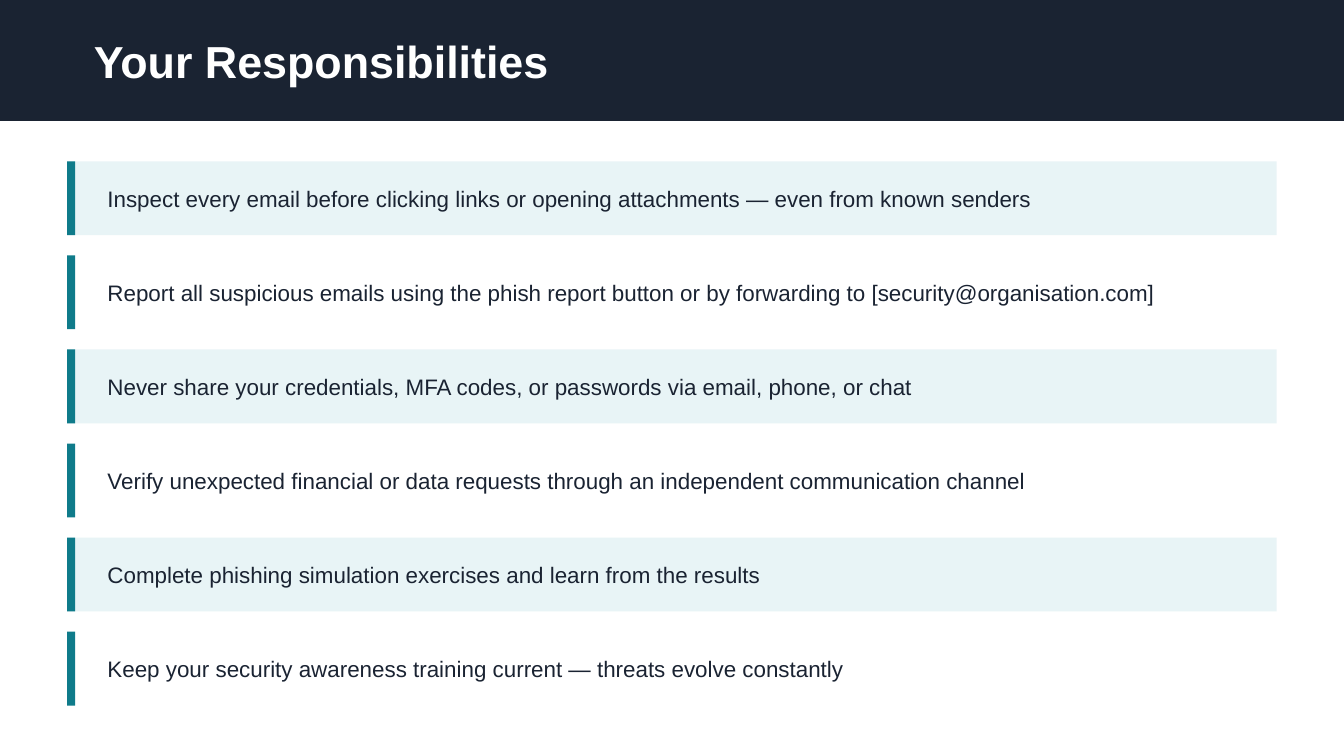
import pptx
import pptx.dml.color
import pptx.enum.shapes
import pptx.enum.text
import pptx.util

Pt = pptx.util.Pt

COLOURS = {
    "navy": "1A2332",
    "teal": "0F7B8A",
    "tint": "E8F4F6",
    "white": "FFFFFF",
}

RESPONSIBILITIES = [
    "Inspect every email before clicking links or opening attachments — even from known senders",
    "Report all suspicious emails using the phish report button or by forwarding to [security@organisation.com]",
    "Never share your credentials, MFA codes, or passwords via email, phone, or chat",
    "Verify unexpected financial or data requests through an independent communication channel",
    "Complete phishing simulation exercises and learn from the results",
    "Keep your security awareness training current — threats evolve constantly",
]

PAGE_WIDTH, PAGE_HEIGHT = 720, 405
ROW_LEFT, ROW_TOP = 36, 86.4
ROW_WIDTH, ROW_HEIGHT = 648, 39.6
ROW_STEP = 50.4


def colour(name):
    return pptx.dml.color.RGBColor.from_string(COLOURS[name])


def add_block(page, left, top, width, height, fill):
    block = page.shapes.add_shape(
        pptx.enum.shapes.MSO_SHAPE.RECTANGLE, Pt(left), Pt(top), Pt(width), Pt(height)
    )
    block.shadow.inherit = False
    block.fill.solid()
    block.fill.fore_color.rgb = colour(fill)
    block.line.fill.background()


def add_text(page, left, top, width, height, text, size, ink, bold=False):
    box = page.shapes.add_textbox(Pt(left), Pt(top), Pt(width), Pt(height))
    frame = box.text_frame
    frame.word_wrap = True
    frame.vertical_anchor = pptx.enum.text.MSO_ANCHOR.MIDDLE
    para = frame.paragraphs[0]
    para.text = text
    para.font.name = "Arial"
    para.font.size = Pt(size)
    para.font.bold = bold
    para.font.color.rgb = colour(ink)
    return frame


def add_header(page, title):
    add_block(page, 0, 0, PAGE_WIDTH, 64.8, "navy")
    add_text(page, 43.2, 7.2, 633.6, 50.4, title, 24, "white", bold=True)


def add_row(page, index, text):
    top = ROW_TOP + index * ROW_STEP
    fill = "white" if index % 2 else "tint"
    add_block(page, ROW_LEFT, top, ROW_WIDTH, ROW_HEIGHT, fill)
    add_block(page, ROW_LEFT, top, 4.32, ROW_HEIGHT, "teal")
    frame = add_text(page, 57.6, top, 612, ROW_HEIGHT, text, 12, "navy")
    frame.margin_left = frame.margin_right = 0
    frame.margin_top = frame.margin_bottom = 0


def main():
    deck = pptx.Presentation()
    deck.slide_width = Pt(PAGE_WIDTH)
    deck.slide_height = Pt(PAGE_HEIGHT)
    page = deck.slides.add_slide(deck.slide_layouts[6])
    page.background.fill.solid()
    page.background.fill.fore_color.rgb = colour("white")
    add_header(page, "Your Responsibilities")
    for index, text in enumerate(RESPONSIBILITIES):
        add_row(page, index, text)
    deck.save("out.pptx")


if __name__ == "__main__":
    main()
